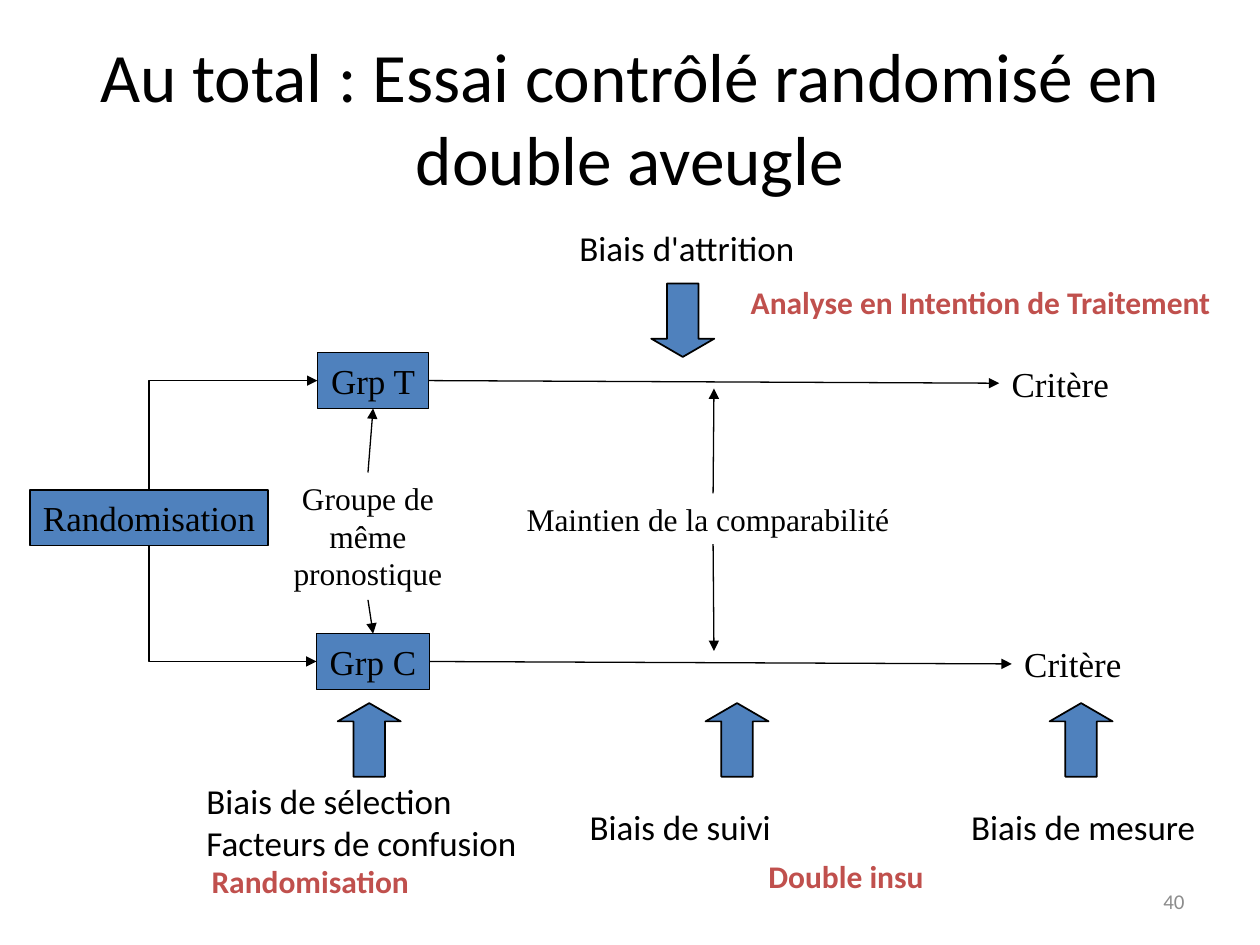
from lxml import etree
from pptx import Presentation
from pptx.dml.color import RGBColor
from pptx.enum.shapes import MSO_CONNECTOR, MSO_SHAPE
from pptx.enum.text import MSO_ANCHOR, MSO_AUTO_SIZE, PP_ALIGN
from pptx.oxml.ns import qn
from pptx.util import Pt

STRAIGHT, ELBOW = MSO_CONNECTOR.STRAIGHT, MSO_CONNECTOR.ELBOW
RECTANGLE, UP_ARROW = MSO_SHAPE.RECTANGLE, MSO_SHAPE.UP_ARROW
LEFT, CENTER, RIGHT = PP_ALIGN.LEFT, PP_ALIGN.CENTER, PP_ALIGN.RIGHT
TOP, MIDDLE = MSO_ANCHOR.TOP, MSO_ANCHOR.MIDDLE
NO_AUTOFIT = MSO_AUTO_SIZE.NONE

BLACK = RGBColor(0x00, 0x00, 0x00)
BLUE = RGBColor(0x4F, 0x81, 0xBD)
RED = RGBColor(0xC0, 0x50, 0x4D)
GRAY = RGBColor(0x8C, 0x8C, 0x8C)
SANS, SERIF = "Calibri", "Times New Roman"

# Content: all lengths in points
TITLE = "Au total : Essai contrôlé randomisé en double aveugle"
TREATED_Y, CONTROL_Y, MIDDLE_Y = 217.5, 378, 296
GROUP_X, START_X, FOLLOW_X = 213.2, 85.2, 408
BOX_HEIGHT = 31.8
BOXES = [  # text, centre x, centre y, width
    ("Randomisation", START_X, MIDDLE_Y, 136),
    ("Grp T", GROUP_X, TREATED_Y, 63.5),
    ("Grp C", GROUP_X, CONTROL_Y, 64.8),
]
OUTCOMES = [  # left, top
    (571, 203.8),
    (578.2, 363.6),
]
BIASES = [  # lines, left, top, width, height
    (["Biais de sélection", "Facteurs de confusion"], 110.9, 442.1, 193.7, 55.4),
    (["Biais de suivi"], 329.8, 456.5, 119.5, 31.5),
    (["Biais de mesure"], 547.9, 456.5, 144, 31.5),
    (["Biais d'attrition"], 324, 126, 144, 31),
]
REMEDIES = [  # text, left, top, width, height
    ("Randomisation", 113.8, 488.9, 188, 36),
    ("Double insu", 432, 486, 103.7, 29),
    ("Analyse en Intention de Traitement", 421.9, 158.4, 279.4, 29),
]
BLOCK_ARROWS = [  # left, top, points down
    (193, 401.8, False),
    (403.2, 401.8, False),
    (599.8, 401.8, False),
    (372.2, 162, True),
]
HALF = BOX_HEIGHT / 2
ARROWS = [  # from x, from y, to x, to y
    (245, TREATED_Y, 571, 219),
    (245.6, CONTROL_Y, 578.2, 379.4),
    (210.3, 270, GROUP_X, TREATED_Y + HALF),
    (210.3, 342.8, GROUP_X, CONTROL_Y - HALF),
    (407.5, 282, FOLLOW_X, 222),
    (407.5, 311, FOLLOW_X, 372),
]
BRANCHES = [
    (START_X, MIDDLE_Y - HALF, 181.4, TREATED_Y),
    (START_X, MIDDLE_Y + HALF, 180.8, CONTROL_Y),
]

presentation = Presentation()
presentation.slide_width, presentation.slide_height = Pt(720), Pt(540)
slide = presentation.slides.add_slide(presentation.slide_layouts[5])
shapes = slide.shapes


def write(shape, lines, size, font, color=BLACK, align=LEFT, anchor=TOP,
          bold=False, wrap=False):
    frame = shape.text_frame
    frame.text = "\n".join(lines)
    frame.auto_size = NO_AUTOFIT
    frame.word_wrap = wrap
    frame.vertical_anchor = anchor
    for paragraph in frame.paragraphs:
        paragraph.alignment = align
        paragraph.font.size = Pt(size)
        paragraph.font.name = font
        paragraph.font.bold = bold
        paragraph.font.color.rgb = color


def add_text(lines, left, top, width, height, size, font, **style):
    box = shapes.add_textbox(Pt(left), Pt(top), Pt(width), Pt(height))
    write(box, lines, size, font, **style)


def add_filled(kind, left, top, width, height, line_width):
    shape = shapes.add_shape(kind, Pt(left), Pt(top), Pt(width), Pt(height))
    shape.shadow.inherit = False
    shape.fill.solid()
    shape.fill.fore_color.rgb = BLUE
    shape.line.color.rgb = BLACK
    shape.line.width = Pt(line_width)
    return shape


def add_arrow(kind, x1, y1, x2, y2):
    connector = shapes.add_connector(kind, Pt(x1), Pt(y1), Pt(x2), Pt(y2))
    connector.line.color.rgb = BLACK
    connector.line.width = Pt(0.75)
    properties = connector._element.spPr
    etree.SubElement(properties.find(qn("a:ln")), qn("a:tailEnd"), type="triangle")
    etree.SubElement(properties, qn("a:effectLst"))
    return properties


def add_branch(x1, y1, x2, y2):
    """One-bend arrow, vertical first: a bentConnector2 turned by 270 degrees."""
    center_x, center_y = (x1 + x2) / 2, (y1 + y2) / 2
    rise, run = (y2 - y1) / 2, (x2 - x1) / 2
    properties = add_arrow(ELBOW, center_x + rise, center_y - run,
                           center_x - rise, center_y + run)
    properties.find(qn("a:prstGeom")).set("prst", "bentConnector2")
    properties.find(qn("a:xfrm")).set("rot", str(270 * 60000))


# Title
title = shapes.title
title.left, title.top, title.width, title.height = Pt(36), Pt(21.6), Pt(648), Pt(90)
write(title, [TITLE], 39.6, SANS, align=CENTER, anchor=MIDDLE, wrap=True)

# Trial diagram
for text, center_x, center_y, width in BOXES:
    box = add_filled(RECTANGLE, center_x - width / 2, center_y - HALF,
                     width, BOX_HEIGHT, 0.75)
    write(box, [text], 20, SERIF, align=CENTER, anchor=MIDDLE)
for branch in BRANCHES:
    add_branch(*branch)
for arrow in ARROWS:
    add_arrow(STRAIGHT, *arrow)
for left, top in OUTCOMES:
    add_text(["Critère"], left, top, 69.8, 31, 20, SERIF)
add_text(["Groupe de même pronostique"], 144.7, 270, 131, 72.7, 18, SERIF,
         align=CENTER, wrap=True)
add_text(["Maintien de la comparabilité"], 293.8, 282.2, 226.8, 28.8, 18, SERIF)

# Biases and their remedies
for lines, *place in BIASES:
    add_text(lines, *place, 20, SANS)
for left, top, points_down in BLOCK_ARROWS:
    block = add_filled(UP_ARROW, left, top, 36, 42, 1)
    block.adjustments[0], block.adjustments[1] = 0.5, 0.29
    if points_down:
        block._element.spPr.find(qn("a:xfrm")).set("flipV", "1")
for text, *place in REMEDIES:
    add_text([text], *place, 18, SANS, color=RED, bold=True)

# Slide number
add_text(["40"], 516, 500.4, 168, 28.8, 12, SANS, color=GRAY, align=RIGHT,
         anchor=MIDDLE, wrap=True)

presentation.save("out.pptx")
